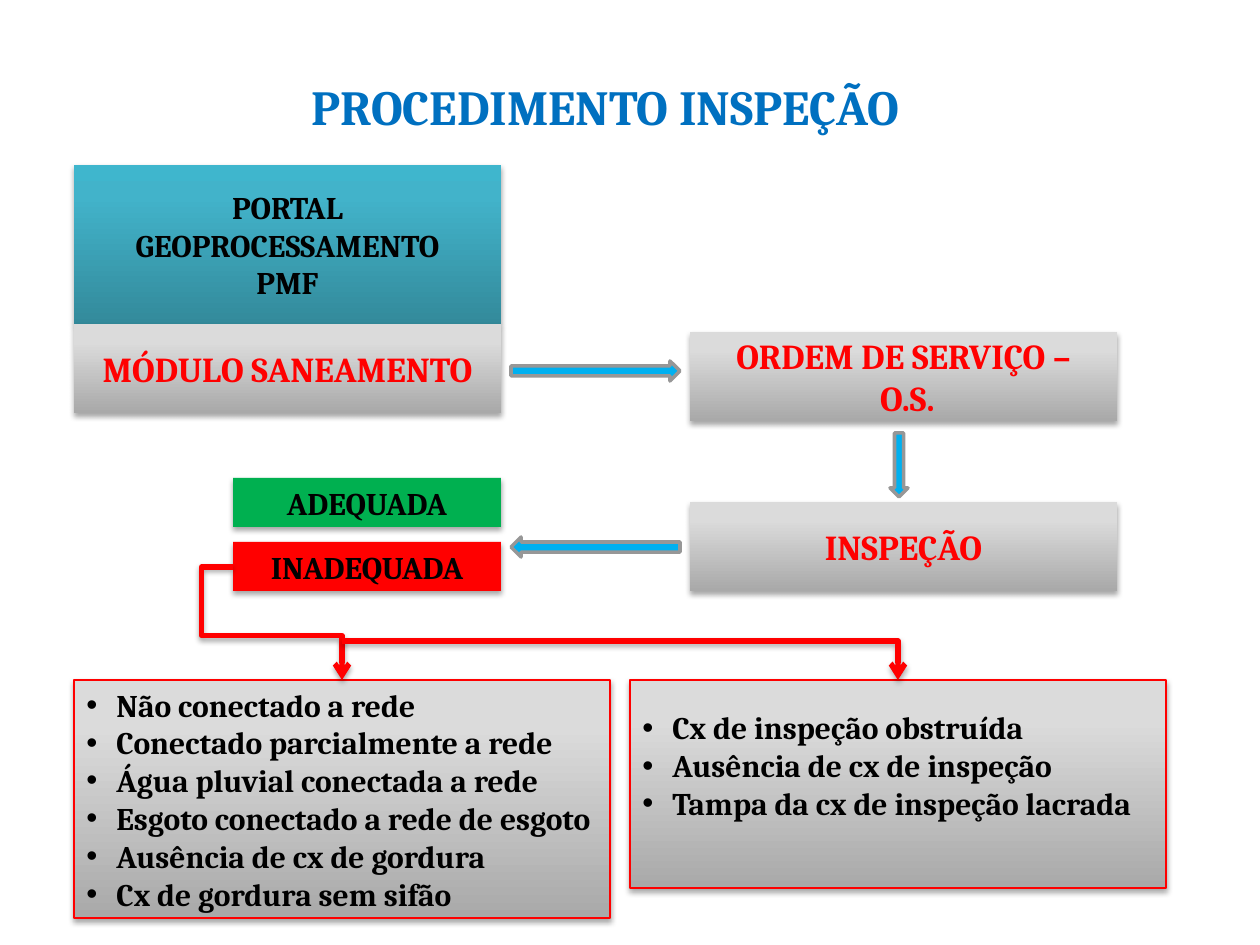
import copy

import lxml.etree
import pptx
import pptx.dml.color
import pptx.enum.shapes
import pptx.enum.text
import pptx.oxml.ns
import pptx.util

EMU_PER_PX = 914400 / 126
SHAPE = pptx.enum.shapes.MSO_SHAPE
ALIGN = pptx.enum.text.PP_ALIGN
ANCHOR = pptx.enum.text.MSO_ANCHOR

BLACK, RED, GREEN = "000000", "FF0000", "00B050"
GREY_FADE = ("A9A9A9", "DBDBDB", "DCDCDC")
TEAL_FADE = ("338A9B", "42B3CA", "3FB6CD")


def px(n):
    return pptx.util.Emu(round(n * EMU_PER_PX))


def rgb(color):
    return pptx.dml.color.RGBColor.from_string(color)


def add_xml(parent, tag, **attrs):
    return lxml.etree.SubElement(parent, pptx.oxml.ns.qn(tag), attrs)


class Deck:
    font = "Cambria"

    def __init__(self):
        self.prs = pptx.Presentation()
        self.prs.slide_width, self.prs.slide_height = px(1260), px(945)
        self.s = None

    def add_slide(self, title, x, y, w, h):
        self.s = self.prs.slides.add_slide(self.prs.slide_layouts[5])
        sp = self.s.shapes.title
        sp.left, sp.top, sp.width, sp.height = map(px, (x, y, w, h))
        sp.text_frame.vertical_anchor = ANCHOR.BOTTOM
        self.add_text(sp.text_frame, [title], 28, "0070C0")

    def add_text(self, tf, lines, size, color, bullets=False):
        tf.word_wrap = True
        for i, line in enumerate(lines):
            p = tf.add_paragraph() if i else tf.paragraphs[0]
            p.alignment = ALIGN.LEFT if bullets else ALIGN.CENTER
            if bullets:
                pPr = p._p.get_or_add_pPr()
                pPr.set("marL", str(px(30)))
                pPr.set("indent", str(px(-30)))
                add_xml(pPr, "a:buFont", typeface="Arial")
                add_xml(pPr, "a:buChar", char="•")
            r = p.add_run()
            r.text = line
            r.font.name, r.font.size, r.font.bold = self.font, pptx.util.Pt(size), True
            r.font.color.rgb = rgb(color)

    def add_shadow(self, effects):
        shadow = add_xml(effects, "a:outerShdw", blurRad="40000", dist="23000",
                         dir="5400000", rotWithShape="0")
        color = add_xml(shadow, "a:srgbClr", val=BLACK)
        add_xml(color, "a:alpha", val="35000")

    def fade(self, sp, colors):
        """Fill upwards through three colours, the middle one at 80 %."""
        sp.fill.gradient()
        sp.fill.gradient_angle = 90
        gs_list = sp._element.spPr.find(".//" + pptx.oxml.ns.qn("a:gsLst"))
        gs_list.append(copy.deepcopy(gs_list[-1]))
        for stop, color, position in zip(sp.fill.gradient_stops, colors, (0, 0.8, 1)):
            stop.color.rgb = rgb(color)
            stop.position = position

    def box(self, x, y, w, h, fill, lines, size=18, color=BLACK, border=None, bullets=False):
        sp = self.s.shapes.add_shape(SHAPE.RECTANGLE, px(x), px(y), px(w), px(h))
        if isinstance(fill, tuple):
            self.fade(sp, fill)
        else:
            sp.fill.solid()
            sp.fill.fore_color.rgb = rgb(fill)
        if border:
            sp.line.color.rgb = rgb(border)
            sp.line.width = pptx.util.Pt(0.75)
        else:
            sp.line.fill.background()
        sp.shadow.inherit = False
        self.add_shadow(sp._element.spPr.find(pptx.oxml.ns.qn("a:effectLst")))
        sp.text_frame.vertical_anchor = ANCHOR.MIDDLE
        self.add_text(sp.text_frame, lines, size, color, bullets)
        return sp

    def block_arrow(self, x, y, w, h, rotation=0):
        sp = self.s.shapes.add_shape(SHAPE.RIGHT_ARROW, px(x), px(y), px(w), px(h))
        sp.rotation = rotation
        sp.fill.solid()
        sp.fill.fore_color.rgb = rgb("00B0F0")
        sp.line.color.rgb = rgb("979797")
        sp.line.width = pptx.util.Pt(2)
        sp.shadow.inherit = False

    def elbow(self, x1, y1, x2, y2, preset, adjustments=()):
        """Bent arrow; adjustments are the bends in 1/100000 of its width and height."""
        kind = pptx.enum.shapes.MSO_CONNECTOR.ELBOW
        cxn = self.s.shapes.add_connector(kind, px(x1), px(y1), px(x2), px(y2))
        cxn.line.color.rgb = rgb(RED)
        cxn.line.width = pptx.util.Pt(3)
        spPr = cxn._element.spPr
        add_xml(spPr.find(pptx.oxml.ns.qn("a:ln")), "a:tailEnd", type="arrow")
        geometry = spPr.find(pptx.oxml.ns.qn("a:prstGeom"))
        geometry.set("prst", preset)
        guides = geometry.find(pptx.oxml.ns.qn("a:avLst"))
        for i, value in enumerate(adjustments, 1):
            add_xml(guides, "a:gd", name=f"adj{i}", fmla=f"val {value}")
        self.add_shadow(add_xml(spPr, "a:effectLst"))


def main():
    deck = Deck()
    deck.add_slide("PROCEDIMENTO INSPEÇÃO", 223, 66, 764, 76)

    deck.box(74, 165, 427, 159, TEAL_FADE, ["PORTAL", "GEOPROCESSAMENTO", "PMF"])
    for x, y, lines in (
        (690, 332, ["ORDEM DE SERVIÇO –", " O.S."]),
        (74, 324, ["MÓDULO SANEAMENTO"]),
        (690, 502, ["INSPEÇÃO"]),
    ):
        deck.box(x, y, 427, 89, GREY_FADE, lines, 20, RED)
    for y, fill, result in ((542, RED, "INADEQUADA"), (478, GREEN, "ADEQUADA")):
        deck.box(233, y, 268, 49, fill, [result])

    deck.block_arrow(511, 361, 169, 20)
    deck.block_arrow(511, 537, 169, 20, 180)
    deck.block_arrow(867, 456, 64, 18, 90)

    deck.box(74, 680, 536, 238, GREY_FADE, [
        "Não conectado a rede",
        "Conectado parcialmente a rede",
        "Água pluvial conectada a rede",
        "Esgoto conectado a rede de esgoto",
        "Ausência de cx de gordura",
        "Cx de gordura sem sifão",
    ], border=RED, bullets=True)
    deck.elbow(233, 567, 342, 680, "bentConnector4", (-28900, 60900))

    inspection_box = deck.box(630, 680, 536, 208, GREY_FADE, [
        "Cx de inspeção obstruída",
        "Ausência de cx de inspeção",
        "Tampa da cx de inspeção lacrada",
    ], border=RED, bullets=True)
    inspection_box.text_frame.margin_bottom = px(44)
    deck.elbow(342, 641, 898, 680, "bentConnector2")

    deck.prs.save("out.pptx")


if __name__ == "__main__":
    main()
